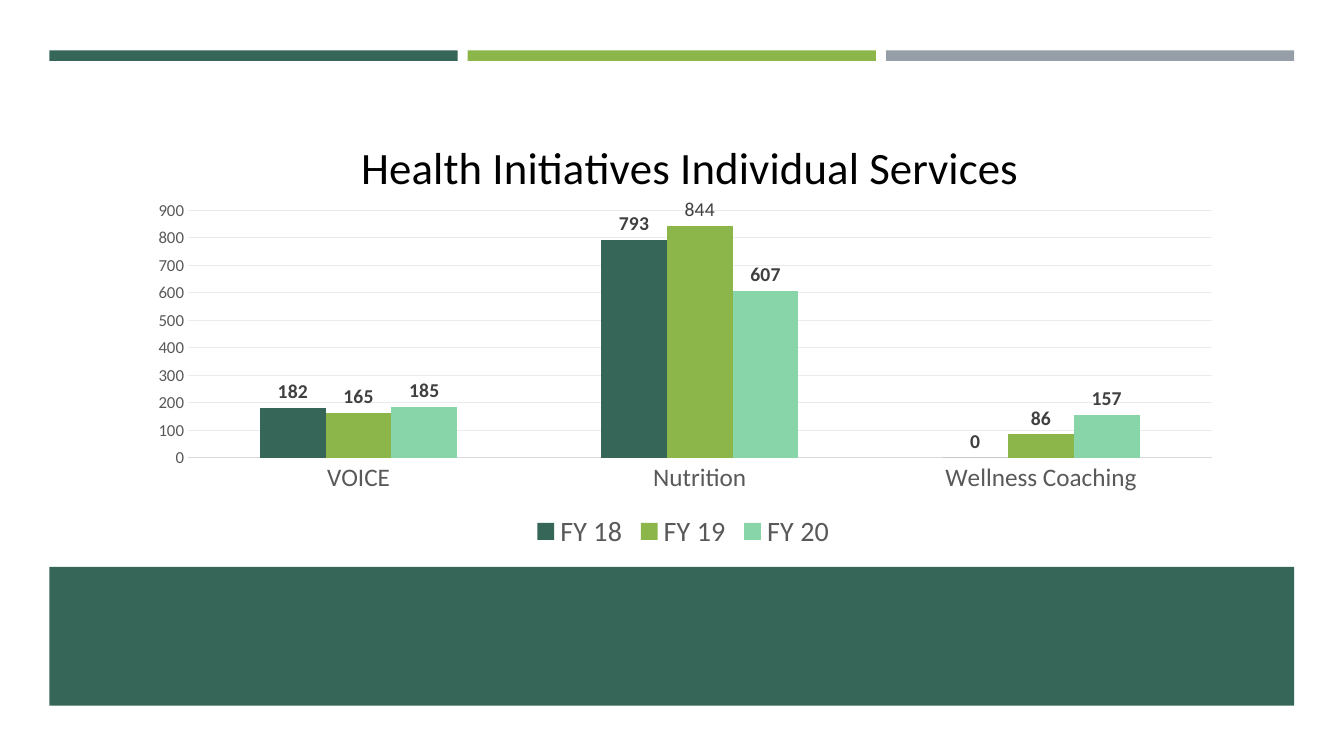
from dataclasses import dataclass

from lxml.etree import SubElement
from pptx import Presentation
from pptx.chart.data import CategoryChartData
from pptx.dml.color import RGBColor
from pptx.enum.chart import XL_CHART_TYPE, XL_LABEL_POSITION, XL_LEGEND_POSITION, XL_TICK_MARK
from pptx.enum.shapes import MSO_SHAPE
from pptx.oxml.ns import qn
from pptx.util import Pt


@dataclass(frozen=True)
class Theme:
    """Colours and type sizes of the slide."""
    font: str = "Calibri"
    forest: str = "366658"
    leaf: str = "8CB64A"
    mint: str = "88D5A9"
    slate: str = "969FA7"
    title: str = "000000"
    axis_text: str = "595959"
    label_text: str = "404040"
    axis_line: str = "D9D9D9"
    grid: str = "EBEBEB"
    title_size: int = 32
    legend_size: int = 20
    category_size: int = 18
    label_size: int = 14
    value_size: int = 12


THEME = Theme()
CATEGORIES = ("VOICE", "Nutrition", "Wellness Coaching")
SERVICES = (
    ("FY 18", (182, 793, 0), THEME.forest),
    ("FY 19", (165, 844, 86), THEME.leaf),
    ("FY 20", (185, 607, 157), THEME.mint),
)


def style_font(font, size, color, bold=False):
    """Apply the theme face with a size, colour and weight."""
    font.name = THEME.font
    font.size = Pt(size)
    font.bold = bold
    font.color.rgb = RGBColor.from_string(color)


def style_line(line, color):
    """Draw a thin line in the given colour."""
    line.width = Pt(0.75)
    line.color.rgb = RGBColor.from_string(color)


def add_band(slide, box, color):
    """Add a plain filled rectangle."""
    band = slide.shapes.add_shape(MSO_SHAPE.RECTANGLE, *map(Pt, box))
    band.shadow.inherit = False
    band.fill.solid()
    band.fill.fore_color.rgb = RGBColor.from_string(color)
    band.line.fill.background()


def add_top_stripes(slide, box, gap=7.2):
    """Split the box into three equal coloured stripes."""
    left, top, width, height = box
    colors = (THEME.forest, THEME.leaf, THEME.slate)
    stripe = (width - gap * (len(colors) - 1)) / len(colors)
    for index, color in enumerate(colors):
        add_band(slide, (left + index * (stripe + gap), top, stripe, height), color)


def place(element, **fractions):
    """Give a chart part a manual layout in fractions of the chart."""
    layout = element.find(qn("c:layout"))
    if layout is None:
        layout = SubElement(element, qn("c:layout"))
        element.insert(0, layout)
    manual = SubElement(layout, qn("c:manualLayout"))
    if "w" in fractions:
        SubElement(manual, qn("c:layoutTarget")).set("val", "inner")
    for side in ("x", "y"):
        SubElement(manual, qn(f"c:{side}Mode")).set("val", "edge")
    for side, fraction in fractions.items():
        SubElement(manual, qn(f"c:{side}")).set("val", str(fraction))


def style_axes(chart):
    """Format both axes and the horizontal grid."""
    category, value = chart.category_axis, chart.value_axis
    for axis, size in ((category, THEME.category_size), (value, THEME.value_size)):
        axis.major_tick_mark = axis.minor_tick_mark = XL_TICK_MARK.NONE
        style_font(axis.tick_labels.font, size, THEME.axis_text)
    style_line(category.format.line, THEME.axis_line)
    value.format.line.fill.background()
    value.minimum_scale, value.maximum_scale, value.major_unit = 0, 900, 100
    value.has_major_gridlines = True
    style_line(value.major_gridlines.format.line, THEME.grid)


def style_series(plot):
    """Colour the columns and label their values."""
    plot.gap_width, plot.overlap = 219, 0
    plot.vary_by_categories = False
    for series, (_, _, color) in zip(plot.series, SERVICES):
        series.format.fill.solid()
        series.format.fill.fore_color.rgb = RGBColor.from_string(color)
        labels = series.data_labels
        labels.show_value = True
        labels.position = XL_LABEL_POSITION.OUTSIDE_END
        style_font(labels.font, THEME.label_size, THEME.label_text, True)
    peak = plot.series[1].points[1].data_label
    style_font(peak.font, THEME.label_size, THEME.label_text)
    peak.position = XL_LABEL_POSITION.OUTSIDE_END


def add_services_chart(slide, box):
    """Add the clustered column chart of individual services."""
    services = CategoryChartData()
    services.categories = CATEGORIES
    for year, counts, _ in SERVICES:
        services.add_series(year, counts)
    frame = slide.shapes.add_chart(XL_CHART_TYPE.COLUMN_CLUSTERED, *map(Pt, box), services)
    chart = frame.chart
    style_font(chart.font, 10, THEME.title)
    chart.has_title = True
    heading = chart.chart_title.text_frame.paragraphs[0].add_run()
    heading.text = "Health Initiatives Individual Services"
    style_font(heading.font, THEME.title_size, THEME.title)
    chart.chart_title.include_in_layout = False
    place(chart.chart_title._element, x=0.2, y=0.07)
    place(chart._chartSpace.chart.plotArea, x=0.05, y=0.25, w=0.93, h=0.54)
    chart.has_legend = True
    chart.legend.position = XL_LEGEND_POSITION.BOTTOM
    chart.legend.include_in_layout = False
    style_font(chart.legend.font, THEME.legend_size, THEME.axis_text)
    style_axes(chart)
    style_series(chart.plots[0])


def main():
    """Build and save the slide."""
    deck = Presentation()
    deck.slide_width, deck.slide_height = Pt(960), Pt(540)
    slide = deck.slides.add_slide(deck.slide_layouts[6])
    add_top_stripes(slide, (35.3, 36, 889.2, 7.5))
    add_band(slide, (35.3, 404.9, 889.2, 99.1), THEME.forest)
    add_services_chart(slide, (95, 68.4, 786.2, 327.6))
    deck.save("out.pptx")


if __name__ == "__main__":
    main()
